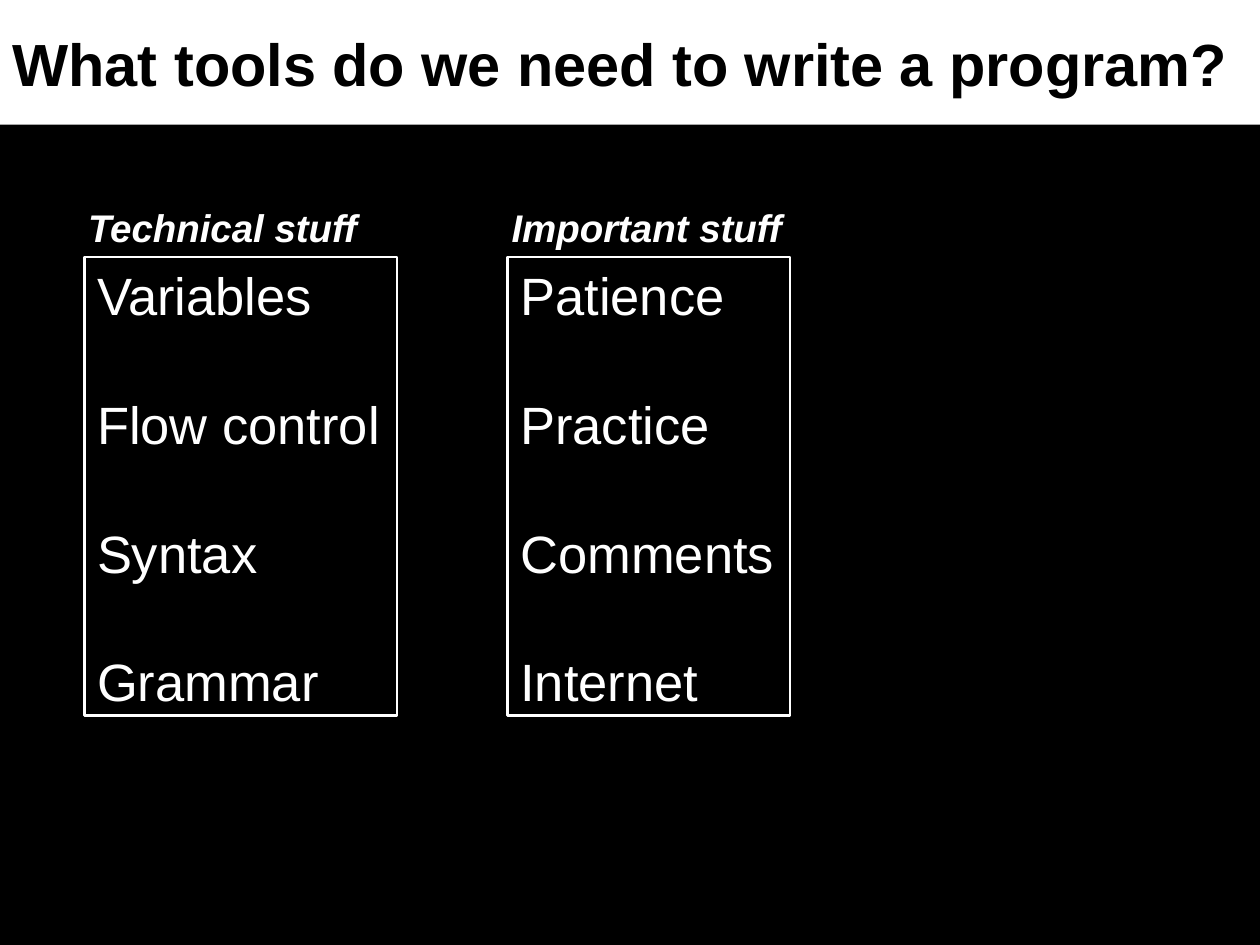
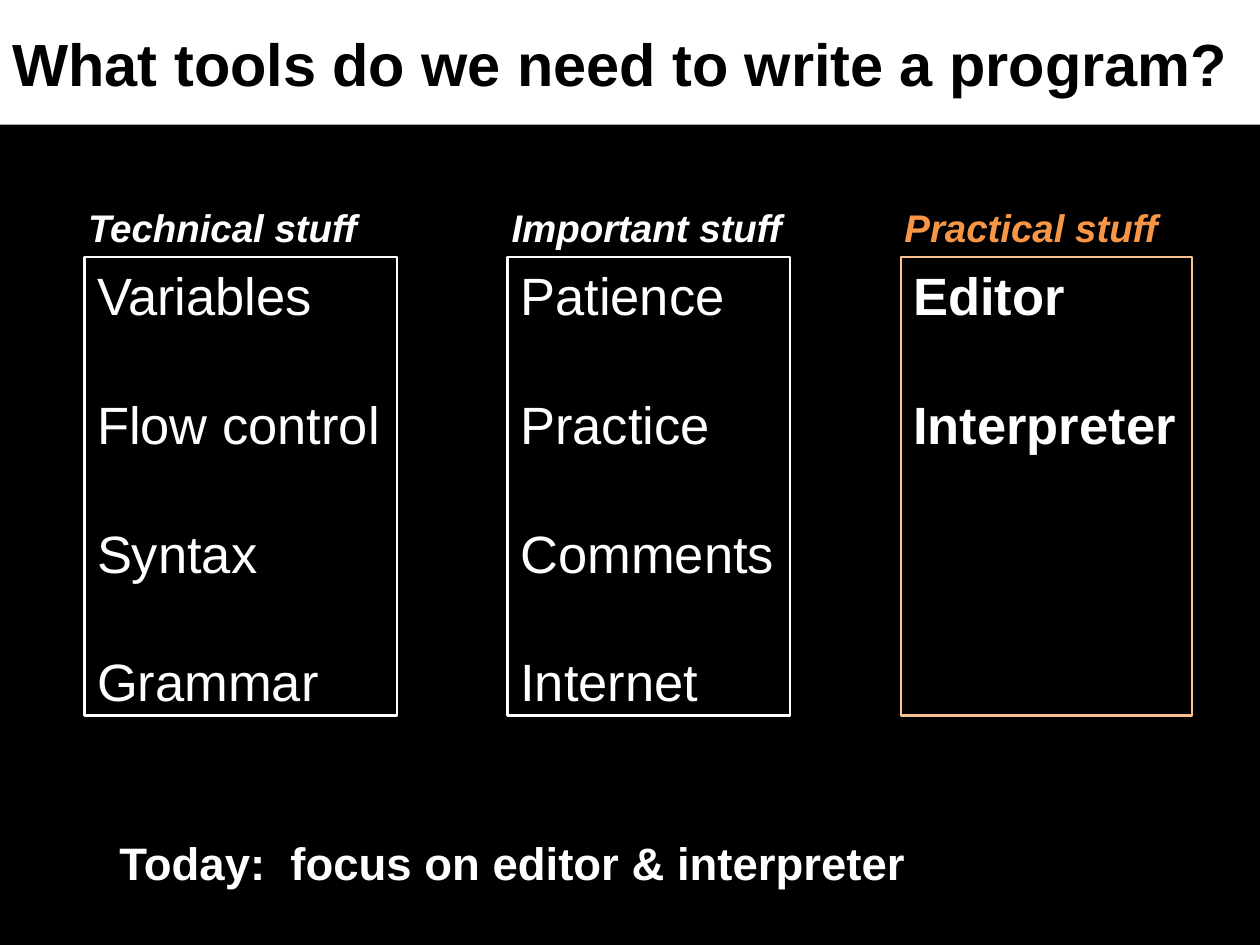
from dataclasses import dataclass

from lxml.etree import SubElement
from pptx import Presentation
from pptx.dml.color import RGBColor
from pptx.enum.text import MSO_ANCHOR, MSO_AUTO_SIZE, PP_ALIGN
from pptx.oxml.ns import qn
from pptx.shapes.autoshape import Shape
from pptx.slide import Slide
from pptx.util import Inches, Pt

HUES = {"ink": "000000", "paper": "FFFFFF", "accent": "F79646", "edge": "FAC090"}
COLS, ROWS = 100, 75
TITLE = "What tools do we need to write a program?"
FONT = "Arial"
HEAD_TOP, HEAD_WIDE, HEAD_HIGH, HEAD_SHIFT = 15.7, 24.4, 4.7, 0.7
LIST_TOP, LIST_HIGH = 20.4, 36.4


@dataclass(frozen=True)
class Style:
    """Describe the look of a block of text."""
    size: int
    hue: str = "paper"
    bold: bool = False
    slant: bool = False
    gap: float = 0


@dataclass(frozen=True)
class Column:
    """Describe one headed list, measured in grid columns."""
    left: float
    wide: float
    head: str
    items: tuple[str, ...]
    hue: str = "paper"
    edge: str = "paper"
    bold: bool = False


TECH = Column(6.7, 24.8, "Technical stuff",
              ("Variables", "Flow control", "Syntax", "Grammar"))
CORE = Column(40.3, 22.4, "Important stuff",
              ("Patience", "Practice", "Comments", "Internet"))
TOOLS = Column(71.5, 23.1, "Practical stuff", ("Editor", "Interpreter"),
               "accent", "edge", True)

deck = Presentation()
deck.slide_width, deck.slide_height = Inches(10), Inches(7.5)


def tint(name: str) -> RGBColor:
    """Look up a named colour."""
    return RGBColor.from_string(HUES[name])


def place(shape: Shape, left: float, top: float, wide: float, high: float) -> None:
    """Move a shape to its grid position."""
    unit_x, unit_y = deck.slide_width / COLS, deck.slide_height / ROWS
    shape.left, shape.top = round(left * unit_x), round(top * unit_y)
    shape.width, shape.height = round(wide * unit_x), round(high * unit_y)


def write(shape: Shape, lines: tuple[str, ...], style: Style,
          anchor: MSO_ANCHOR = MSO_ANCHOR.TOP) -> None:
    """Fill a shape with plain left-aligned lines."""
    frame = shape.text_frame
    frame.text = "\n".join(lines)
    frame.word_wrap, frame.auto_size = True, MSO_AUTO_SIZE.NONE
    frame.vertical_anchor, frame.margin_right = anchor, 0
    for rank, para in enumerate(frame.paragraphs):
        para.alignment = PP_ALIGN.LEFT
        para.space_before = Pt(style.gap if rank else 0)
        props = para._p.get_or_add_pPr()
        props.set("marL", "0")
        props.set("indent", "0")
        SubElement(props, qn("a:buNone"))
        font = para.font
        font.name, font.size = FONT, Pt(style.size)
        font.bold, font.italic = style.bold, style.slant
        font.color.rgb = tint(style.hue)


def add_box(slide: Slide) -> Shape:
    """Add an empty text box."""
    return slide.shapes.add_textbox(0, 0, 0, 0)


def draw(col: Column, head: Shape, body: Shape) -> None:
    """Draw a heading above its framed list."""
    place(head, col.left - HEAD_SHIFT, HEAD_TOP, HEAD_WIDE, HEAD_HIGH)
    write(head, (col.head,), Style(22, col.hue, True, True))
    place(body, col.left, LIST_TOP, col.wide, LIST_HIGH)
    body.line.color.rgb = tint(col.edge)
    body.line.width = Pt(1.5)
    write(body, col.items, Style(30, bold=col.bold, gap=37.5))


def start() -> Slide:
    """Add a slide with the title band and the two shared lists."""
    slide = deck.slides.add_slide(deck.slide_layouts.get_by_name("Comparison"))
    title, *slots = slide.placeholders
    place(title, 0, 0, COLS, 9.9)
    title.fill.solid()
    title.fill.fore_color.rgb = tint("paper")
    write(title, (TITLE,), Style(34, "ink", True), MSO_ANCHOR.MIDDLE)
    for col, head, body in zip((TECH, CORE), slots[::2], slots[1::2]):
        draw(col, head, body)
    return slide


def main() -> None:
    """Build and save the slides."""
    back = deck.slide_master.background.fill
    back.solid()
    back.fore_color.rgb = tint("ink")
    start()
    last = start()
    draw(TOOLS, add_box(last), add_box(last))
    note = add_box(last)
    place(note, 8.5, 65.8, 65, 5.4)
    write(note, ("Today:  focus on editor & interpreter",), Style(26, bold=True))
    deck.save("out.pptx")


if __name__ == "__main__":
    main()
